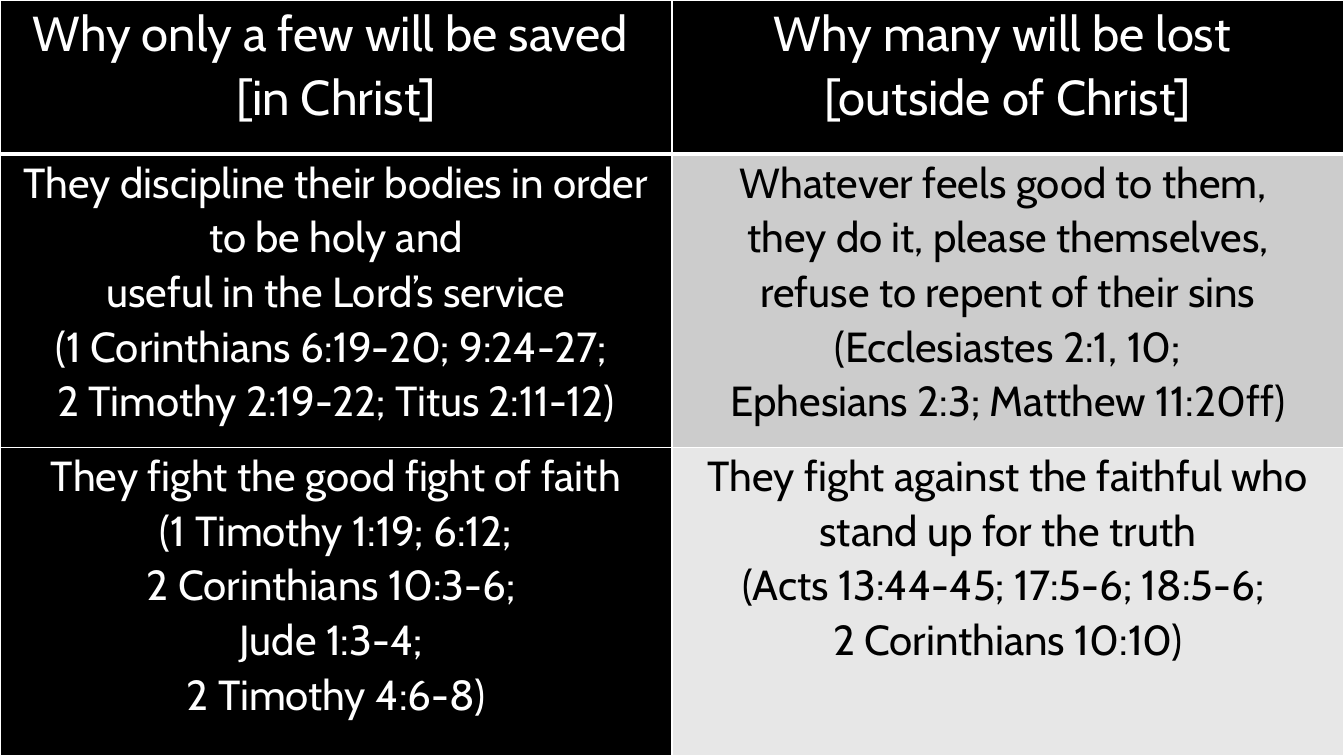
from lxml import etree
from pptx import Presentation
from pptx.dml.color import RGBColor
from pptx.enum.text import MSO_ANCHOR, PP_ALIGN
from pptx.oxml.ns import qn
from pptx.util import Inches, Pt

CENTER = PP_ALIGN.CENTER
TOP = MSO_ANCHOR.TOP
SLIDE_W, SLIDE_H = 13.33, 7.5
BLANK_LAYOUT = 6
FONT = "Cabin"
BLACK, WHITE = "000000", "FFFFFF"
ROW_HEIGHTS = [1.53, 2.91, 3.06]
ROW_SIZES = [35, 30, 30]
LOST_FILLS = [BLACK, "CCCCCC", "E7E7E7"]

SAVED = [
    ["Why only a few will be saved ", "[in Christ]"],
    ["They discipline their bodies in order to be holy and",
     "useful in the Lord’s service",
     "(1 Corinthians 6:19-20; 9:24-27; ",
     "2 Timothy 2:19-22; Titus 2:11-12)"],
    ["They fight the good fight of faith",
     "(1 Timothy 1:19; 6:12;",
     "2 Corinthians 10:3-6; ",
     "Jude 1:3-4; ",
     "2 Timothy 4:6-8)"],
]
LOST = [
    ["Why many will be lost ", "[outside of Christ]"],
    ["Whatever feels good to them, ",
     "they do it, please themselves,",
     "refuse to repent of their sins",
     "(Ecclesiastes 2:1, 10;",
     "Ephesians 2:3; Matthew 11:20ff)"],
    ["They fight against the faithful who stand up for the truth",
     "(Acts 13:44-45; 17:5-6; 18:5-6; ",
     "2 Corinthians 10:10)"],
]


def rgb(color):
    return RGBColor.from_string(color)


def set_borders(cell, top, bottom):
    """Draw white borders, with the top and bottom widths in points."""
    tc_pr = cell._tc.get_or_add_tcPr()
    for side, width in (("L", 1), ("R", 1), ("T", top), ("B", bottom)):
        ln = etree.SubElement(tc_pr, qn(f"a:ln{side}"), w=str(Pt(width)))
        fill = etree.SubElement(ln, qn("a:solidFill"))
        etree.SubElement(fill, qn("a:srgbClr"), val=WHITE)


def fill_cell(cell, lines, size, fill):
    cell.fill.solid()
    cell.fill.fore_color.rgb = rgb(fill)
    cell.margin_left = cell.margin_right = Inches(0.07)
    cell.margin_top = cell.margin_bottom = 0
    cell.vertical_anchor = TOP
    tf = cell.text_frame
    tf.text = "\n".join(lines)
    for p in tf.paragraphs:
        p.alignment = CENTER
        p.line_spacing = 1.07
        p.space_before = p.space_after = Pt(0)
        font = p.runs[0].font
        font.name = FONT
        font.size = Pt(size)
        font.bold = False
        font.color.rgb = rgb(WHITE if fill == BLACK else BLACK)


def add_comparison(s, left, top, width, height):
    columns = [(SAVED, [BLACK] * len(SAVED)), (LOST, LOST_FILLS)]
    table = s.shapes.add_table(
        len(ROW_HEIGHTS), len(columns),
        Inches(left), Inches(top), Inches(width), Inches(height)).table
    for row, row_height in zip(table.rows, ROW_HEIGHTS):
        row.height = Inches(height * row_height / sum(ROW_HEIGHTS))
    for c, (texts, fills) in enumerate(columns):
        table.columns[c].width = Inches(width / len(columns))
        for r, (lines, size, fill) in enumerate(zip(texts, ROW_SIZES, fills)):
            cell = table.cell(r, c)
            set_borders(cell, 3 if r == 1 else 1, 3 if r == 0 else 1)
            fill_cell(cell, lines, size, fill)


def main():
    prs = Presentation()
    prs.slide_width, prs.slide_height = Inches(SLIDE_W), Inches(SLIDE_H)
    s = prs.slides.add_slide(prs.slide_layouts[BLANK_LAYOUT])
    s.background.fill.solid()
    s.background.fill.fore_color.rgb = rgb(BLACK)
    add_comparison(s, 0, 0, SLIDE_W, SLIDE_H)
    prs.save("out.pptx")


if __name__ == "__main__":
    main()
